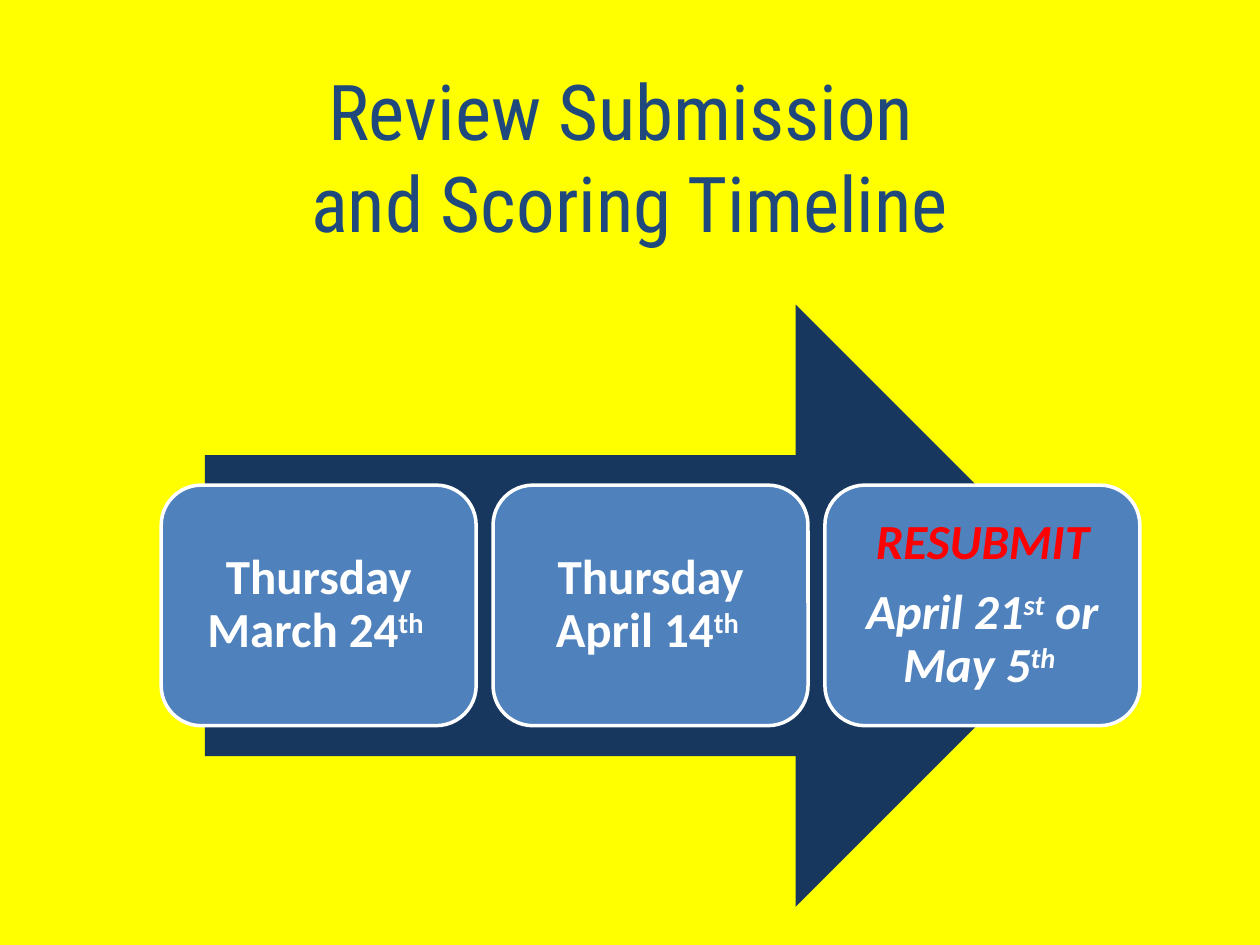
"""Build the submission and scoring timeline slide."""
from dataclasses import dataclass

import pptx
import pptx.dml.color
import pptx.enum.shapes
import pptx.enum.text
import pptx.util

Cm = pptx.util.Cm
Pt = pptx.util.Pt
COLORS = {
    "background": "FFFF00",
    "title": "1F497D",
    "arrow": "17375E",
    "box": "4F81BD",
    "white": "FFFFFF",
    "alert": "FF0000",
}
BOX_LEFT, BOX_TOP, BOX_WIDTH, BOX_HEIGHT = 3.25, 9.78, 6.35, 4.85
BOX_PITCH = 6.69


@dataclass(frozen=True)
class Piece:
    text: str
    raised: bool = False
    color: str = "white"


@dataclass(frozen=True)
class Milestone:
    lines: tuple[tuple[Piece, ...], ...]
    italic: bool = False


MILESTONES = (
    Milestone(((Piece("Thursday March 24"), Piece("th ", True)),)),
    Milestone(((Piece("Thursday April 14"), Piece("th ", True)),)),
    Milestone(
        (
            (Piece("RESUBMIT", color="alert"),),
            (
                Piece("April 21"),
                Piece("st", True),
                Piece(" or May 5"),
                Piece("th ", True),
            ),
        ),
        italic=True,
    ),
)


def rgb(name: str) -> pptx.dml.color.RGBColor:
    return pptx.dml.color.RGBColor.from_string(COLORS[name])


def style_font(font, name: str, size: float, color: str) -> None:
    font.name = name
    font.size = Pt(size)
    font.color.rgb = rgb(color)


def add_title(page, text: str) -> None:
    box = page.shapes.add_textbox(Cm(1.27), Cm(1.55), Cm(22.86), Cm(3.18))
    frame = box.text_frame
    frame.word_wrap = True
    frame.vertical_anchor = pptx.enum.text.MSO_ANCHOR.MIDDLE
    para = frame.paragraphs[0]
    para.text = text
    para.alignment = pptx.enum.text.PP_ALIGN.CENTER
    for span in para.runs:
        style_font(span.font, "Roboto Condensed", 44, "title")


def add_arrow(page) -> None:
    arrow = page.shapes.add_shape(
        pptx.enum.shapes.MSO_SHAPE.RIGHT_ARROW,
        Cm(4.13), Cm(6.14), Cm(17.98), Cm(12.14),
    )
    arrow.shadow.inherit = False
    arrow.fill.solid()
    arrow.fill.fore_color.rgb = rgb("arrow")
    arrow.line.fill.background()


def add_piece(para, piece: Piece, italic: bool) -> None:
    span = para.add_run()
    span.text = piece.text
    style_font(span.font, "Calibri", 28, piece.color)
    span.font.bold = True
    span.font.italic = italic
    if piece.raised:
        span.font._element.set("baseline", "30000")


def add_milestone(page, index: int, milestone: Milestone) -> None:
    box = page.shapes.add_shape(
        pptx.enum.shapes.MSO_SHAPE.ROUNDED_RECTANGLE,
        Cm(BOX_LEFT + index * BOX_PITCH), Cm(BOX_TOP), Cm(BOX_WIDTH), Cm(BOX_HEIGHT),
    )
    box.shadow.inherit = False
    box.fill.solid()
    box.fill.fore_color.rgb = rgb("box")
    box.line.color.rgb = rgb("white")
    box.line.width = Pt(2)
    frame = box.text_frame
    frame.word_wrap = True
    frame.vertical_anchor = pptx.enum.text.MSO_ANCHOR.MIDDLE
    frame.margin_left = frame.margin_right = Cm(0.3)
    frame.margin_top = frame.margin_bottom = Cm(0.3)
    for number, line in enumerate(milestone.lines):
        para = frame.add_paragraph() if number else frame.paragraphs[0]
        para.alignment = pptx.enum.text.PP_ALIGN.CENTER
        para.line_spacing = 0.9
        para.space_after = Pt(9.8)
        for piece in line:
            add_piece(para, piece, milestone.italic)


def main() -> None:
    deck = pptx.Presentation()
    deck.slide_width, deck.slide_height = Cm(25.4), Cm(19.05)
    page = deck.slides.add_slide(deck.slide_layouts[6])
    page.background.fill.solid()
    page.background.fill.fore_color.rgb = rgb("background")
    add_title(page, "Review Submission \vand Scoring Timeline")
    add_arrow(page)
    for index, milestone in enumerate(MILESTONES):
        add_milestone(page, index, milestone)
    deck.save("out.pptx")


if __name__ == "__main__":
    main()
